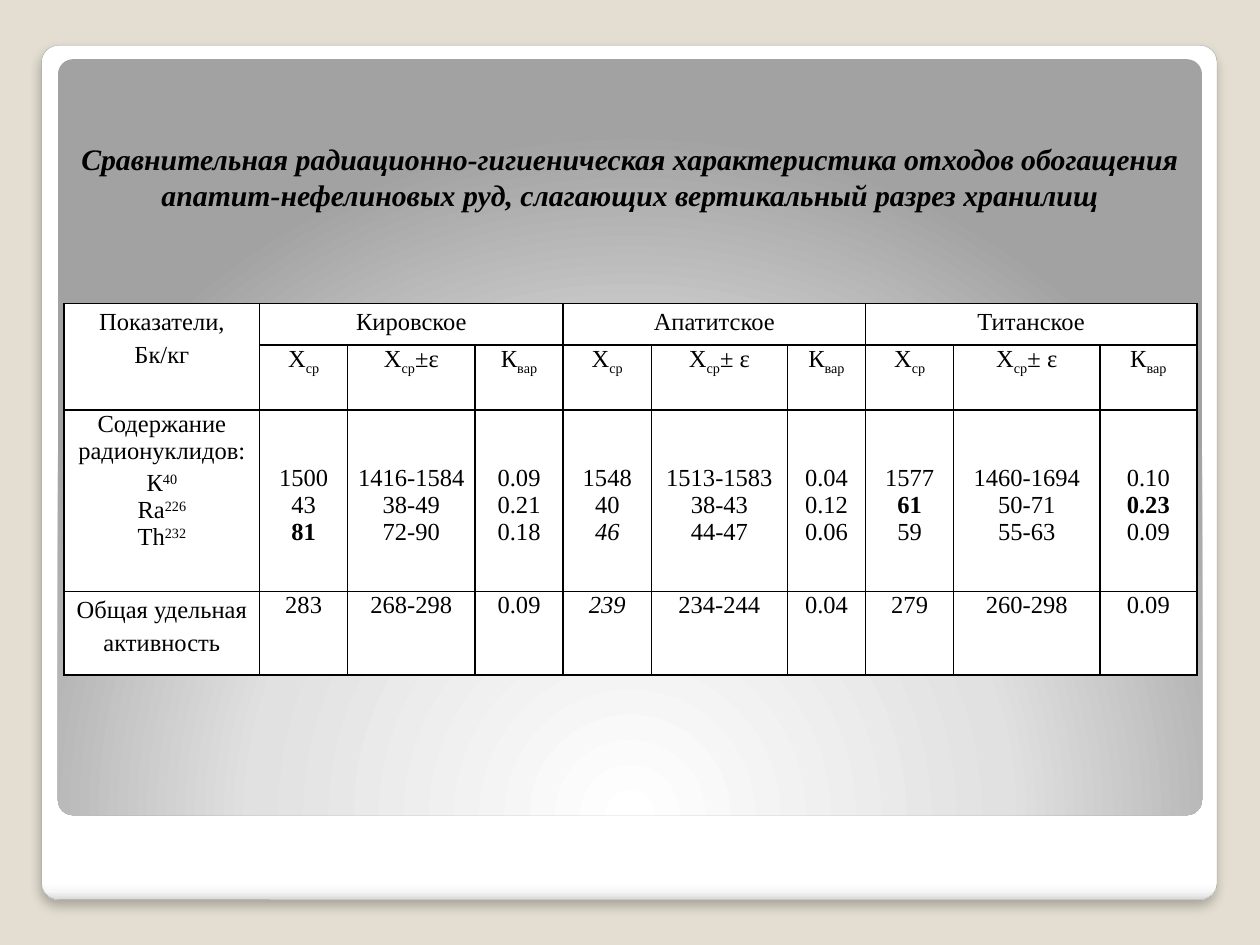
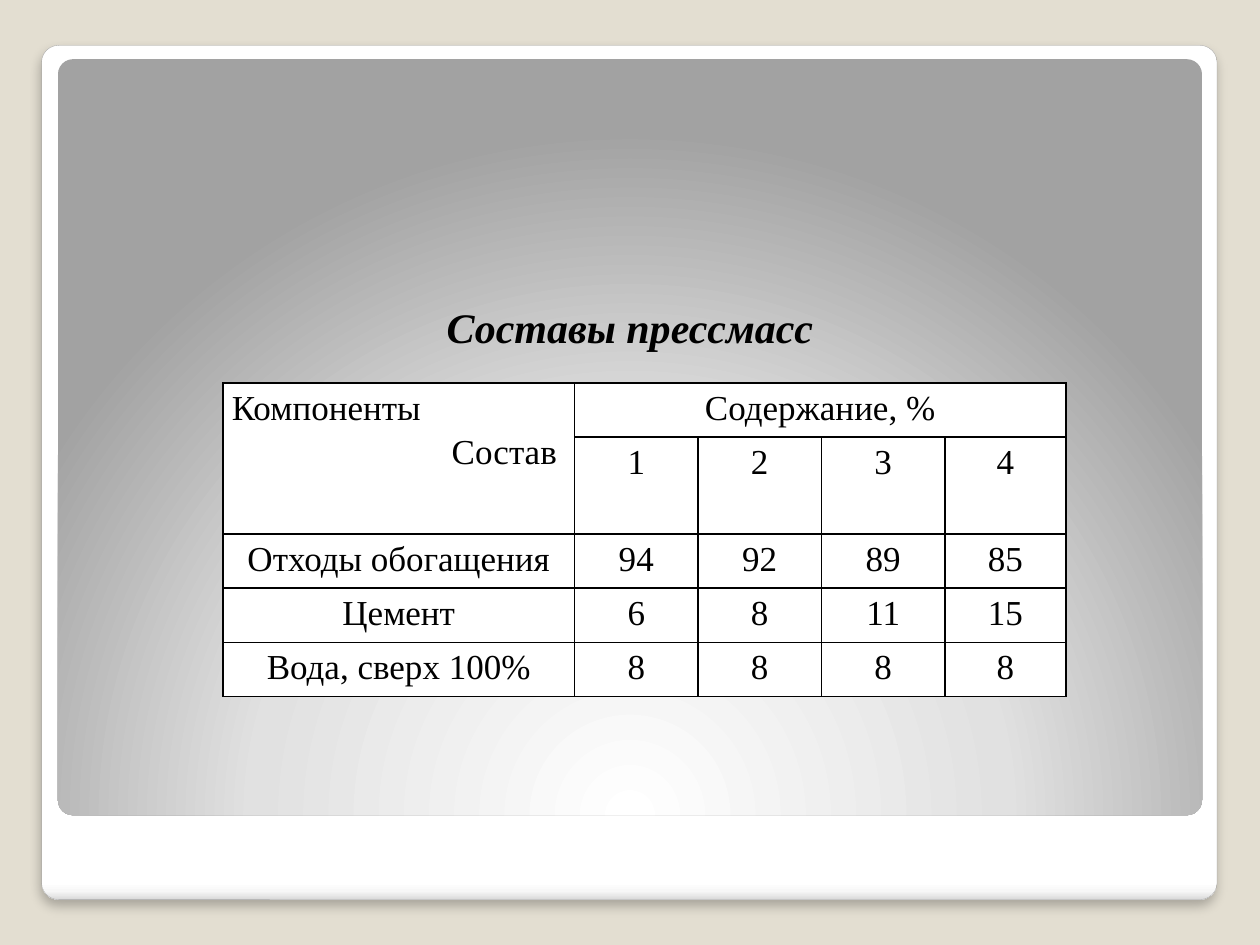
from lxml import etree
from pptx import Presentation
from pptx.dml.color import RGBColor
from pptx.enum import shapes, text
from pptx.oxml import parse_xml
from pptx.oxml.ns import nsdecls, qn
from pptx.util import Inches, Pt

# Shared look
FONT = "Times New Roman"
BLACK, WHITE, BACKDROP, EDGE = "000000", "FFFFFF", "E3DED1", "A4A4A4"
CARD_STOPS = [(0, WHITE), (98, WHITE), (99, "F7F7F7"), (100, "DADADA")]
PANEL_STOPS = [(0, WHITE), (55, "E1E1E1"), (100, "A2A2A2")]
DOWNWARD = '<a:lin ang="5400000" scaled="0"/>'
FROM_BOTTOM = ('<a:path path="circle"><a:fillToRect l="50000" t="175000" '
               'r="50000" b="-75000"/></a:path>')
CENTER, LEFT, RIGHT = (text.PP_ALIGN.CENTER, text.PP_ALIGN.LEFT,
                       text.PP_ALIGN.RIGHT)

# First letter of a marked run gives its style
BASELINES = {"_": "-25000", "^": "30000"}


def color(hex_code):
    return RGBColor.from_string(hex_code)


def style_run(run, size, bold=False, italic=False):
    font = run.font
    font.name, font.size, font.bold, font.italic = FONT, Pt(size), bold, italic
    font.color.rgb = color(BLACK)


# Background card and panel
def add_rounded(slide, left, top, width, height, stops, direction):
    box = slide.shapes.add_shape(
        shapes.MSO_SHAPE.ROUNDED_RECTANGLE,
        Inches(left), Inches(top), Inches(width), Inches(height))
    box.adjustments[0] = 0.02
    box.shadow.inherit = False
    box.line.fill.background()
    box.fill.background()
    stop_xml = "".join(
        f'<a:gs pos="{pos * 1000}"><a:srgbClr val="{code}"/></a:gs>'
        for pos, code in stops)
    properties = box._element.spPr
    properties.replace(properties.find(qn("a:noFill")), parse_xml(
        f'<a:gradFill {nsdecls("a")} rotWithShape="1">'
        f'<a:gsLst>{stop_xml}</a:gsLst>{direction}</a:gradFill>'))
    return box


def add_slide(prs):
    slide = prs.slides.add_slide(prs.slide_layouts[6])
    slide.background.fill.solid()
    slide.background.fill.fore_color.rgb = color(BACKDROP)
    card = add_rounded(slide, 0.33, 0.36, 9.33, 6.78, CARD_STOPS, DOWNWARD)
    card.line.color.rgb = color(EDGE)
    card.line.width = Pt(0.16)
    card._element.spPr.find(qn("a:effectLst")).append(parse_xml(
        f'<a:outerShdw {nsdecls("a")} blurRad="{Pt(6)}" dist="{Pt(4)}" '
        'dir="5400000" algn="ctr" rotWithShape="0"><a:srgbClr val="000000">'
        '<a:alpha val="25000"/></a:srgbClr></a:outerShdw>'))
    add_rounded(slide, 0.46, 0.47, 9.08, 6, PANEL_STOPS, FROM_BOTTOM)
    return slide


def add_title(slide, left, top, width, height, words, size, wrap=True):
    title = slide.shapes.add_textbox(
        Inches(left), Inches(top), Inches(width), Inches(height))
    frame = title.text_frame
    frame.text = words
    frame.word_wrap = wrap
    frame.auto_size = text.MSO_AUTO_SIZE.SHAPE_TO_FIT_TEXT
    frame.paragraphs[0].alignment = CENTER
    style_run(frame.paragraphs[0].runs[0], size, bold=True, italic=True)


# Tables
def write_cell(cell, content, size, spacing=1.0):
    """Lines are split by a newline, runs by a bar."""
    frame = cell.text_frame
    frame.text = content
    for paragraph, line in zip(frame.paragraphs, content.split("\n")):
        paragraph.text = ""
        paragraph.alignment = CENTER
        paragraph.line_spacing = spacing
        for part in line.split("|"):
            mark = part[0] if part[0] in "_^*/" else ""
            run = paragraph.add_run()
            run.text = part[len(mark):]
            style_run(run, size, bold=mark == "*", italic=mark == "/")
            if mark in BASELINES:
                run.font._element.set("baseline", BASELINES[mark])


def frame_cell(cell):
    cell.margin_left = cell.margin_right = Inches(0.07)
    cell.margin_top = cell.margin_bottom = 0
    cell.fill.solid()
    cell.fill.fore_color.rgb = color(WHITE)
    properties = cell._tc.get_or_add_tcPr()
    for index, side in enumerate(("lnL", "lnR", "lnT", "lnB")):
        border = etree.Element(qn(f"a:{side}"), w=str(Pt(1)))
        fill = etree.SubElement(border, qn("a:solidFill"))
        etree.SubElement(fill, qn("a:srgbClr"), val=BLACK)
        properties.insert(index, border)


def add_grid(slide, left, top, columns, rows, merges):
    table = slide.shapes.add_table(
        len(rows), len(columns), Inches(left), Inches(top),
        Inches(sum(columns)), Inches(sum(rows))).table
    table.first_row = table.horz_banding = False
    for column, width in zip(table.columns, columns):
        column.width = Inches(width)
    for row, height in zip(table.rows, rows):
        row.height = Inches(height)
    for cell in table.iter_cells():
        frame_cell(cell)
    for first, last in merges:
        table.cell(*first).merge(table.cell(*last))
    return table


def build_radiation_slide(prs):
    slide = add_slide(prs)
    table = add_grid(
        slide, 0.51, 2.41,
        [1.55, 0.7, 1.01, 0.7, 0.7, 1.08, 0.62, 0.7, 1.16, 0.77],
        [0.33, 0.51, 1.44, 0.66],
        [((0, 0), (1, 0))] + [((0, c), (0, c + 2)) for c in (1, 4, 7)])
    size = 14
    write_cell(table.cell(0, 0), "Показатели,\nБк/кг", size, 1.2)
    for index, deposit in enumerate(("Кировское", "Апатитское", "Титанское")):
        first = 1 + 3 * index
        write_cell(table.cell(0, first), deposit, size, 1.2)
        interval = "Х|_ср|±ε" if index == 0 else "Х|_ср|± ε"
        for offset, heading in enumerate(("Х|_ср", interval, "К|_вар")):
            write_cell(table.cell(1, first + offset), heading, size)

    nuclides = table.cell(2, 0)
    write_cell(nuclides, "Содержание радионуклидов:\nК|^40\nRa|^226\nTh|^232", size)
    nuclides.text_frame.paragraphs[1].line_spacing = 1.2
    write_cell(table.cell(3, 0), "Общая удельная активность", size, 1.2)

    contents = ["1500\n43\n*81", "1416-1584\n38-49\n72-90", "0.09\n0.21\n0.18",
                "1548\n40\n/46", "1513-1583\n38-43\n44-47", "0.04\n0.12\n0.06",
                "1577\n*61\n59", "1460-1694\n50-71\n55-63", "0.10\n*0.23\n0.09"]
    activity = ["283", "268-298", "0.09", "/239", "234-244", "0.04",
                "279", "260-298", "0.09"]
    for column, (values, total) in enumerate(zip(contents, activity), 1):
        write_cell(table.cell(2, column), values, size)
        table.cell(2, column).margin_top = Inches(0.43)
        write_cell(table.cell(3, column), total, size)

    add_title(slide, 0.51, 1.07, 8.98, 0.67,
              "Сравнительная радиационно-гигиеническая характеристика отходов "
              "обогащения апатит-нефелиновых руд, слагающих вертикальный "
              "разрез хранилищ", 17)


def build_mixture_slide(prs):
    slide = add_slide(prs)
    table = add_grid(slide, 1.77, 3.04, [2.79, 0.98, 0.98, 0.98, 0.96],
                     [0.43, 0.71, 0.43, 0.43, 0.43],
                     [((0, 0), (1, 0)), ((0, 1), (0, 4))])
    size, spacing = 20, 1.15
    corner = table.cell(0, 0)
    write_cell(corner, "Компоненты\nСостав", size, spacing)
    corner.margin_right = Inches(0.14)
    for paragraph, side in zip(corner.text_frame.paragraphs, (LEFT, RIGHT)):
        paragraph.alignment = side
    write_cell(table.cell(0, 1), "Содержание, %", size, spacing)

    mixtures = [["", "1", "2", "3", "4"],
                ["Отходы обогащения", "94", "92", "89", "85"],
                ["Цемент", "6", "8", "11", "15"],
                ["Вода, сверх 100%", "8", "8", "8", "8"]]
    for row, values in enumerate(mixtures, 1):
        for column, value in enumerate(values):
            if value:
                write_cell(table.cell(row, column), value, size, spacing)

    add_title(slide, 3.43, 2.34, 3.14, 0.5, "Составы прессмасс", 24, wrap=False)


def main():
    prs = Presentation()
    prs.slide_width, prs.slide_height = Inches(10), Inches(7.5)
    build_radiation_slide(prs)
    build_mixture_slide(prs)
    prs.save("out.pptx")


if __name__ == "__main__":
    main()
